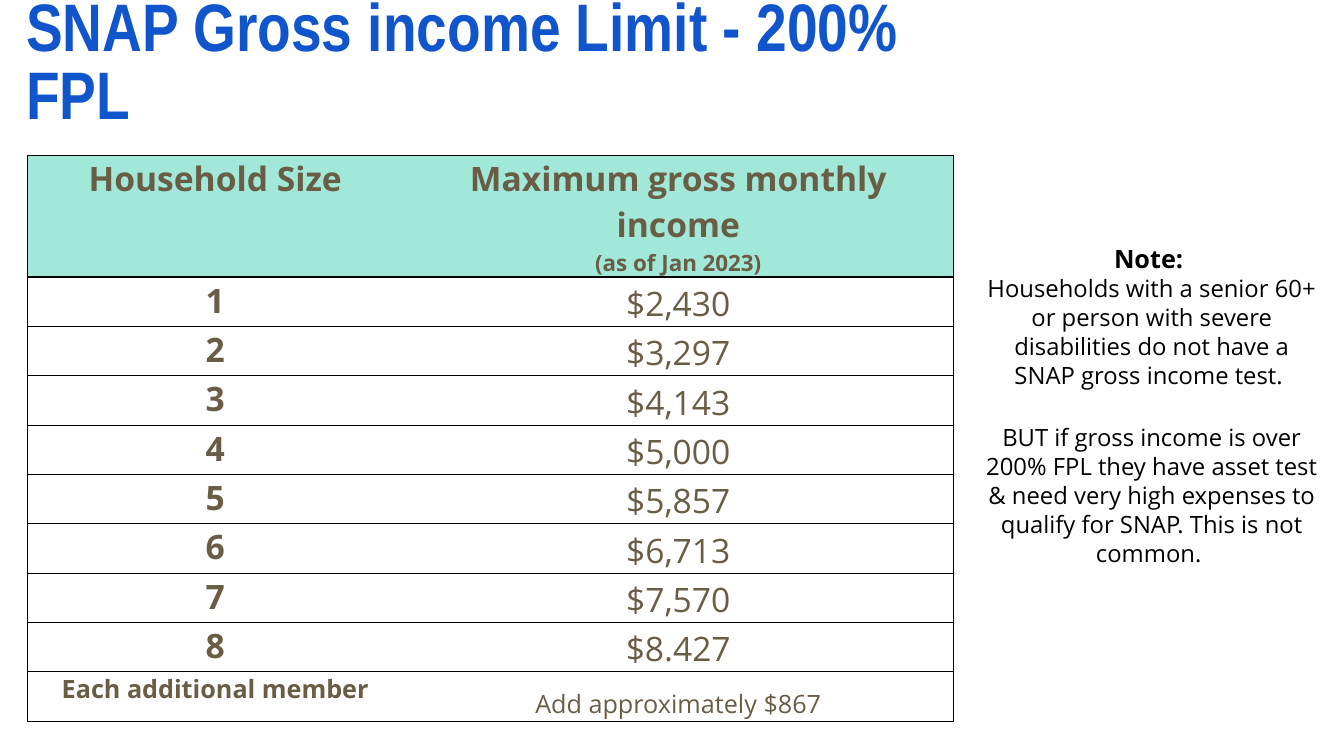
"""Build the SNAP gross income limit slide."""
import pptx
import pptx.dml.color
import pptx.enum.text
import pptx.oxml
import pptx.oxml.ns
import pptx.util

PX = 9525
COLORS = {"title": "1155CC", "note": "000000", "cell": "695D46",
          "header": "A1E8D9", "white": "FFFFFF", "border": "000000"}
ANCHOR = pptx.enum.text.MSO_ANCHOR
CENTER = pptx.enum.text.PP_ALIGN.CENTER
LIMITS = ["$2,430", "$3,297", "$4,143", "$5,000", "$5,857", "$6,713", "$7,570", "$8.427"]


def px(n):
    """Turn pixels into EMU."""
    return pptx.util.Emu(n * PX)


def rgb(name):
    """Look up a named colour."""
    return pptx.dml.color.RGBColor.from_string(COLORS[name])


class Deck:
    """Hold the presentation, its style and the current slide."""

    def __init__(self):
        """Open a blank widescreen slide."""
        self.prs = pptx.Presentation()
        self.prs.slide_width, self.prs.slide_height = px(1280), px(720)
        self.s = self.prs.slides.add_slide(self.prs.slide_layouts[6])

    def style(self, p, size, color, bold=False, font="Open Sans"):
        """Format the runs of a paragraph."""
        for r in p.runs:
            r.font.name, r.font.size, r.font.bold = font, pptx.util.Pt(size), bold
            r.font.color.rgb = rgb(color)

    def text(self, x, y, w, h, text, inset=0):
        """Add a wrapping text box and return its frame."""
        tf = self.s.shapes.add_textbox(px(x), px(y), px(w), px(h)).text_frame
        tf.word_wrap = True
        tf.margin_left = tf.margin_right = px(inset)
        tf.text = text
        return tf

    def title(self, x, y, w, h, text):
        """Add the slide title."""
        tf = self.text(x, y, w, h, text, 10)
        tf.vertical_anchor = ANCHOR.BOTTOM
        p = tf.paragraphs[0]
        p.line_spacing = 0.85
        self.style(p, 48, "title", True, "Arial Narrow")

    def note(self, x, y, w, h, heading, *body):
        """Add a centred note with a bold heading."""
        tf = self.text(x, y, w, h, "\n".join((heading, *body)))
        for i, p in enumerate(tf.paragraphs):
            p.alignment, p.line_spacing = CENTER, 1.02
            p.space_before = pptx.util.Pt(23 if i > 1 else 0)
            self.style(p, 17 if i else 18, "note", i == 0)

    def cell(self, cell, text, sizes, bold, fill, anchor):
        """Fill and format one table cell."""
        cell.margin_left = cell.margin_right = px(7)
        cell.margin_top = cell.margin_bottom = 0
        cell.vertical_anchor = anchor
        cell.fill.solid()
        cell.fill.fore_color.rgb = rgb(fill)
        cell.text_frame.text = text
        for p, size in zip(cell.text_frame.paragraphs, sizes):
            p.alignment = CENTER
            self.style(p, size, "cell", bold)

    def borders(self, cell, **widths):
        """Draw the four cell borders, leaving out those of zero width."""
        tcPr = cell._tc.get_or_add_tcPr()
        for i, side in enumerate("LRTB"):
            width = widths[side]
            paint = (f'<a:solidFill><a:srgbClr val="{COLORS["border"]}"/></a:solidFill>'
                     if width else "<a:noFill/>")
            tcPr.insert(i, pptx.oxml.parse_xml(
                f'<a:ln{side} {pptx.oxml.ns.nsdecls("a")} w="{pptx.util.Pt(width)}">'
                f"{paint}</a:ln{side}>"))

    def table(self, x, y, columns, heights, rows):
        """Add the income table, with bold first row and column."""
        t = self.s.shapes.add_table(len(rows), len(columns), px(x), px(y),
                                    px(sum(columns)), px(sum(heights))).table
        for column, width in zip(t.columns, columns):
            column.width = px(width)
        for i, (row, height) in enumerate(zip(rows, heights)):
            t.rows[i].height = px(height)
            head, last = i == 0, i == len(rows) - 1
            for j, text in enumerate(row):
                c = t.cell(i, j)
                self.cell(c, text, (18,) if last else (24, 16), head or j == 0,
                          "header" if head else "white",
                          ANCHOR.TOP if head or j == 0 else ANCHOR.BOTTOM)
                self.borders(c, L=1 - j, R=j, T=1.5 if i == 1 else 1, B=1.5 if head else 1)


def main():
    """Build and save the slide."""
    d = Deck()
    d.title(15, 30, 937, 102, "SNAP Gross income Limit - 200% FPL")
    d.note(939, 226, 316, 398, "Note: ",
           "Households with a senior 60+ or person with severe disabilities "
           "do not have a SNAP gross income test. ",
           "BUT if gross income is over 200% FPL they have asset test & need very "
           "high expenses to qualify for SNAP. This is not common. ")
    rows = [("Household Size", "Maximum gross monthly income\n(as of Jan 2023)")]
    rows += [(str(n), limit) for n, limit in enumerate(LIMITS, 1)]
    rows.append(("Each additional member", "Add approximately $867"))
    d.table(26, 148, (358, 524), [116] + [47] * 9, rows)
    d.prs.save("out.pptx")


if __name__ == "__main__":
    main()
